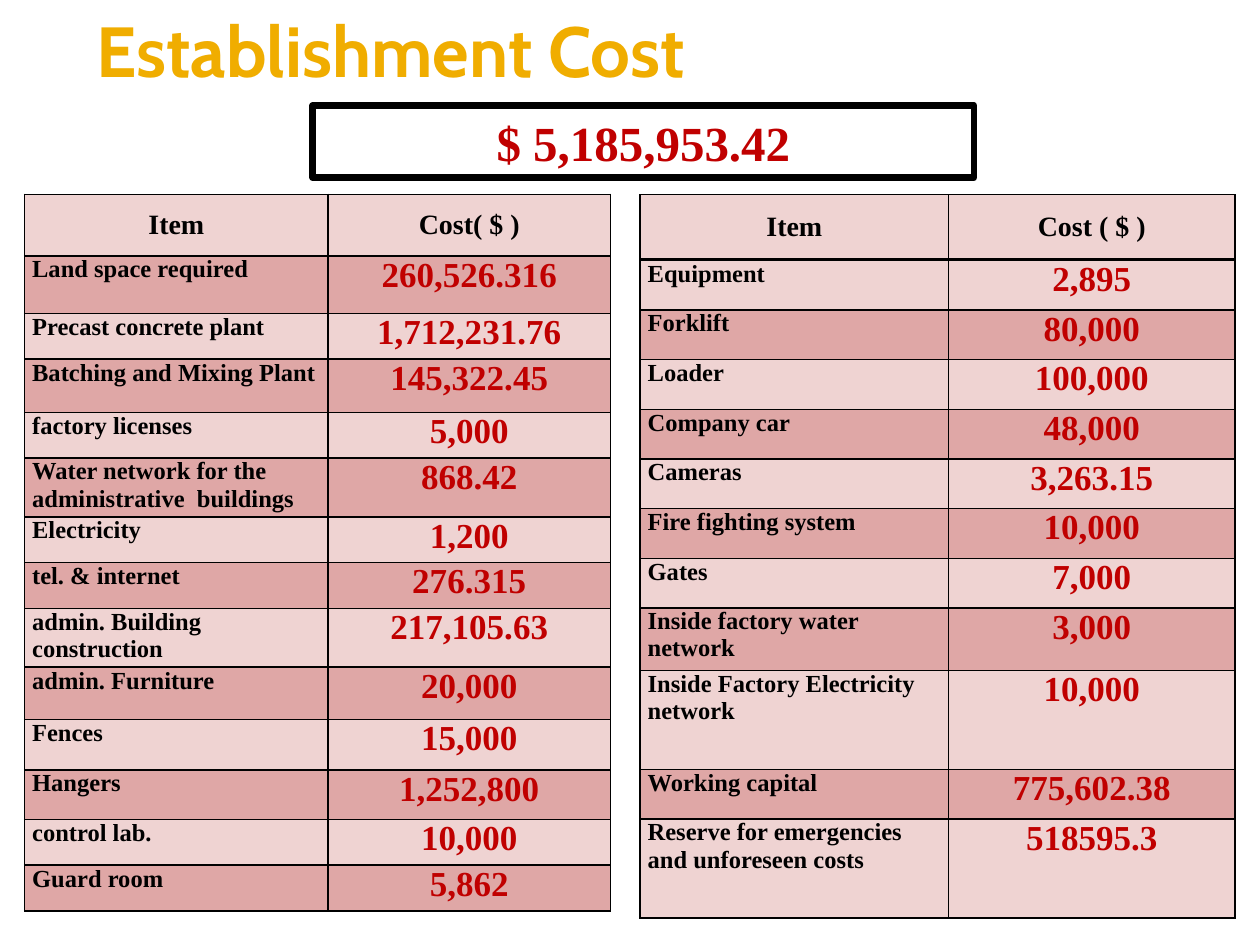
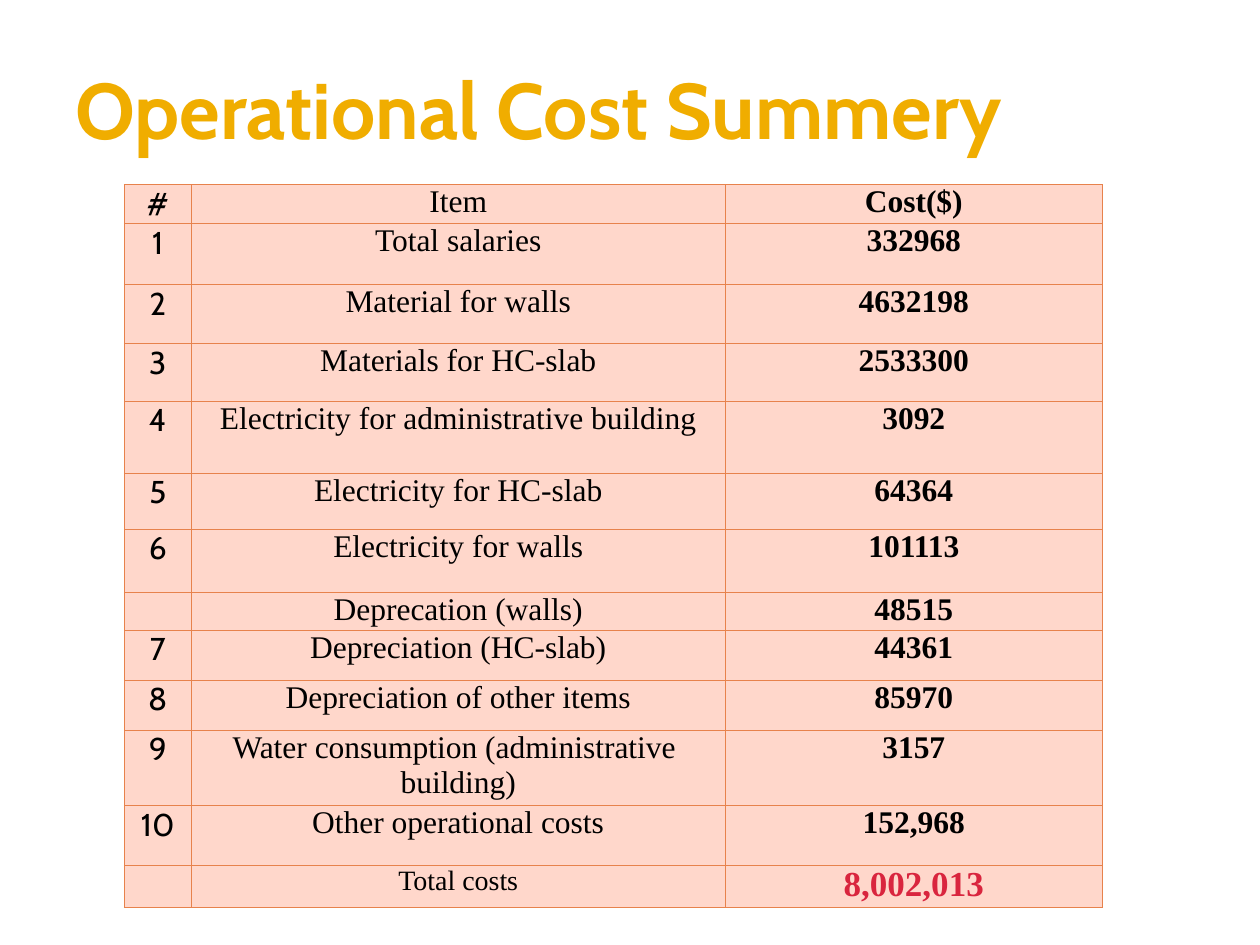
from dataclasses import dataclass

from lxml import etree
from pptx import Presentation
from pptx import util as u
from pptx.dml import color
from pptx.enum import shapes, text
from pptx.oxml import ns

Pt = u.Pt
LEFT, CENTER = text.PP_ALIGN.LEFT, text.PP_ALIGN.CENTER
MIDDLE, TOP = text.MSO_ANCHOR.MIDDLE, text.MSO_ANCHOR.TOP


@dataclass(frozen=True)
class Theme:
    title_font: str = "Cabin"
    body_font: str = "Times New Roman"
    gold: str = "F0AD00"
    black: str = "000000"
    white: str = "FFFFFF"
    amount: str = "C00000"
    total: str = "D9253E"
    light_band: str = "EFD3D2"
    dark_band: str = "DFA7A6"
    peach: str = "FFD7CB"
    orange: str = "E7824C"
    label_size: float = 14
    header_size: float = 16
    body_size: float = 18
    amount_size: float = 20
    banner_size: float = 28


THEME = Theme()


def rgb(value):
    return color.RGBColor.from_string(value)


def write_text(frame, content, *, size, font=THEME.body_font, fill=THEME.black,
               bold=False, align=CENTER, anchor=TOP):
    """Write one formatted paragraph into a text frame or a table cell."""
    frame.vertical_anchor = anchor
    paragraph = getattr(frame, "text_frame", frame).paragraphs[0]
    paragraph.alignment = align
    if not content:
        # Keeps an empty cell from stretching its row
        paragraph._p.get_or_add_endParaRPr().set("sz", str(size * 50))
        return
    run = paragraph.add_run()
    run.text = content
    run.font.name, run.font.size, run.font.bold = font, Pt(size), bold
    run.font.color.rgb = rgb(fill)


class Deck:
    """Holds the theme, the presentation and the current slide."""

    def __init__(self, theme):
        self.theme = theme
        self.presentation = Presentation()
        self.presentation.slide_width = Pt(720)
        self.presentation.slide_height = Pt(540)
        self.slide = None

    def new_slide(self):
        layout = self.presentation.slide_layouts[6]
        self.slide = self.presentation.slides.add_slide(layout)

    def title(self, content, box, size):
        frame = self.slide.shapes.add_textbox(*map(Pt, box)).text_frame
        frame.word_wrap = True
        frame.margin_right = frame.margin_top = frame.margin_bottom = Pt(3.6)
        write_text(frame, content, size=size, font=self.theme.title_font,
                   fill=self.theme.gold, bold=True, align=LEFT, anchor=MIDDLE)

    def banner(self, content, box):
        shape = self.slide.shapes.add_shape(
            shapes.MSO_SHAPE.RECTANGLE, *map(Pt, box))
        shape.shadow.inherit = False
        shape.fill.solid()
        shape.fill.fore_color.rgb = rgb(self.theme.white)
        shape.line.color.rgb = rgb(self.theme.black)
        shape.line.width = Pt(3.78)
        shape.text_frame.word_wrap = True
        write_text(shape.text_frame, content, size=self.theme.banner_size,
                   fill=self.theme.amount, bold=True, anchor=MIDDLE)

    def border(self, cell, line_color, width):
        properties = cell._tc.get_or_add_tcPr()
        for side in ("lnL", "lnR", "lnT", "lnB"):
            line = etree.SubElement(properties, ns.qn("a:" + side),
                                    w=str(Pt(width)))
            solid = etree.SubElement(line, ns.qn("a:solidFill"))
            etree.SubElement(solid, ns.qn("a:srgbClr"), val=line_color)

    def table(self, left, top, widths, heights, rows, *, style, fills, line):
        """style(row, column) gives text format; fills alternate by row."""
        table = self.slide.shapes.add_table(
            len(rows), len(widths), Pt(left), Pt(top),
            Pt(sum(widths)), Pt(sum(heights))).table
        table.first_row = table.horz_banding = False
        for column, width in zip(table.columns, widths):
            column.width = Pt(width)
        for r, (values, height) in enumerate(zip(rows, heights)):
            table.rows[r].height = Pt(height)
            for c, value in enumerate(values):
                cell = table.cell(r, c)
                cell.margin_left = cell.margin_right = Pt(4.3)
                cell.margin_top = cell.margin_bottom = 0
                self.border(cell, *line)
                cell.fill.solid()
                cell.fill.fore_color.rgb = rgb(fills[r % len(fills)])
                write_text(cell, value, **style(r, c))


# Text formats of the tables
def header_style(row, column):
    return dict(size=THEME.header_size, bold=True, anchor=MIDDLE)


def cost_style(row, column):
    if column == 0:
        return dict(size=THEME.label_size, bold=True, align=LEFT)
    return dict(size=THEME.amount_size, bold=True, fill=THEME.amount)


def headed_cost_style(row, column):
    return (cost_style if row else header_style)(row, column)


def summary_style(row, column):
    if row == len(SUMMARY) - 1 and column:
        if column == 1:
            return dict(size=THEME.header_size)
        return dict(size=THEME.amount_size, fill=THEME.total, bold=True)
    font = THEME.body_font if column else THEME.title_font
    return dict(size=THEME.body_size, font=font, bold=column == 2)


# Table contents
SITE_COSTS = [
    ("Item", "Cost( $ )"),
    ("Land space required", "260,526.316"),
    ("Precast concrete plant", "1,712,231.76"),
    ("Batching and Mixing Plant", "145,322.45"),
    ("factory licenses", "5,000"),
    ("Water network for the administrative  buildings", "868.42"),
    ("Electricity", "1,200"),
    ("tel. & internet", "276.315"),
    ("admin. Building construction", "217,105.63"),
    ("admin. Furniture", "20,000"),
    ("Fences", "15,000"),
    ("Hangers", "1,252,800"),
    ("control lab.", "10,000"),
    ("Guard room", "5,862"),
]
SITE_HEIGHTS = [35.1, 32.9, 26.2, 30.5, 26.1, 31.1, 26.1, 26.1, 32.3, 30,
                28.8, 28.3, 26.1, 26.2]

EQUIPMENT_COSTS = [
    ("Equipment", "2,895"),
    ("Forklift", "80,000"),
    ("Loader", "100,000"),
    ("Company car", "48,000"),
    ("Cameras", "3,263.15"),
    ("Fire fighting system", "10,000"),
    ("Gates", "7,000"),
    ("Inside factory water network", "3,000"),
    ("Inside Factory Electricity network", "10,000"),
    ("Working capital", "775,602.38"),
    ("Reserve for emergencies and unforeseen costs", "518595.3"),
]
EQUIPMENT_HEIGHTS = [28.4] * 7 + [35.7, 56.6, 28.4, 56.6]

SUMMARY = [
    ("#", "Item", "Cost($)"),
    ("1", "Total salaries", "332968"),
    ("2", "Material for walls", "4632198"),
    ("3", "Materials for HC-slab", "2533300"),
    ("4", "Electricity for administrative building", "3092"),
    ("5", "Electricity for HC-slab", "64364"),
    ("6", "Electricity for walls", "101113"),
    ("", "Deprecation (walls)", "48515"),
    ("7", "Depreciation (HC-slab)", "44361"),
    ("8", "Depreciation of other items", "85970"),
    ("9", "Water consumption (administrative  building)", "3157"),
    ("10", "Other operational costs", "152,968"),
    ("", "Total costs", "8,002,013"),
]
SUMMARY_HEIGHTS = [22.3, 34.9, 33.7, 33.1, 41.1, 32, 36, 21.2, 28.6, 28.5,
                   40.7, 34.2, 22.3]


def main():
    deck = Deck(THEME)
    banded = dict(fills=(THEME.light_band, THEME.dark_band),
                  line=(THEME.black, 1))

    # Establishment cost: total banner above two item tables
    deck.new_slide()
    deck.title("Establishment Cost", (48, 0, 648, 56), 40.5)
    deck.table(14.1, 111.1, (173.4, 161.3), SITE_HEIGHTS, SITE_COSTS,
               style=headed_cost_style, **banded)
    right, right_widths = 365.8, (176.2, 163.8)
    deck.table(right, 148.8, right_widths, EQUIPMENT_HEIGHTS, EQUIPMENT_COSTS,
               style=cost_style, **banded)
    deck.table(right, 111.3, right_widths, [36.7], [("Item", "Cost ( $ )")],
               style=header_style, **banded)
    deck.banner("$ 5,185,953.42", (178.6, 60.3, 378, 41.2))

    # Operational cost: one summary table
    deck.new_slide()
    deck.title("Operational Cost Summery", (36, 12.2, 648, 98.6), 45)
    deck.table(71, 105.5, (38.3, 305.2, 215.4), SUMMARY_HEIGHTS, SUMMARY,
               style=summary_style, fills=(THEME.peach,),
               line=(THEME.orange, 0.5))

    deck.presentation.save("out.pptx")


if __name__ == "__main__":
    main()
